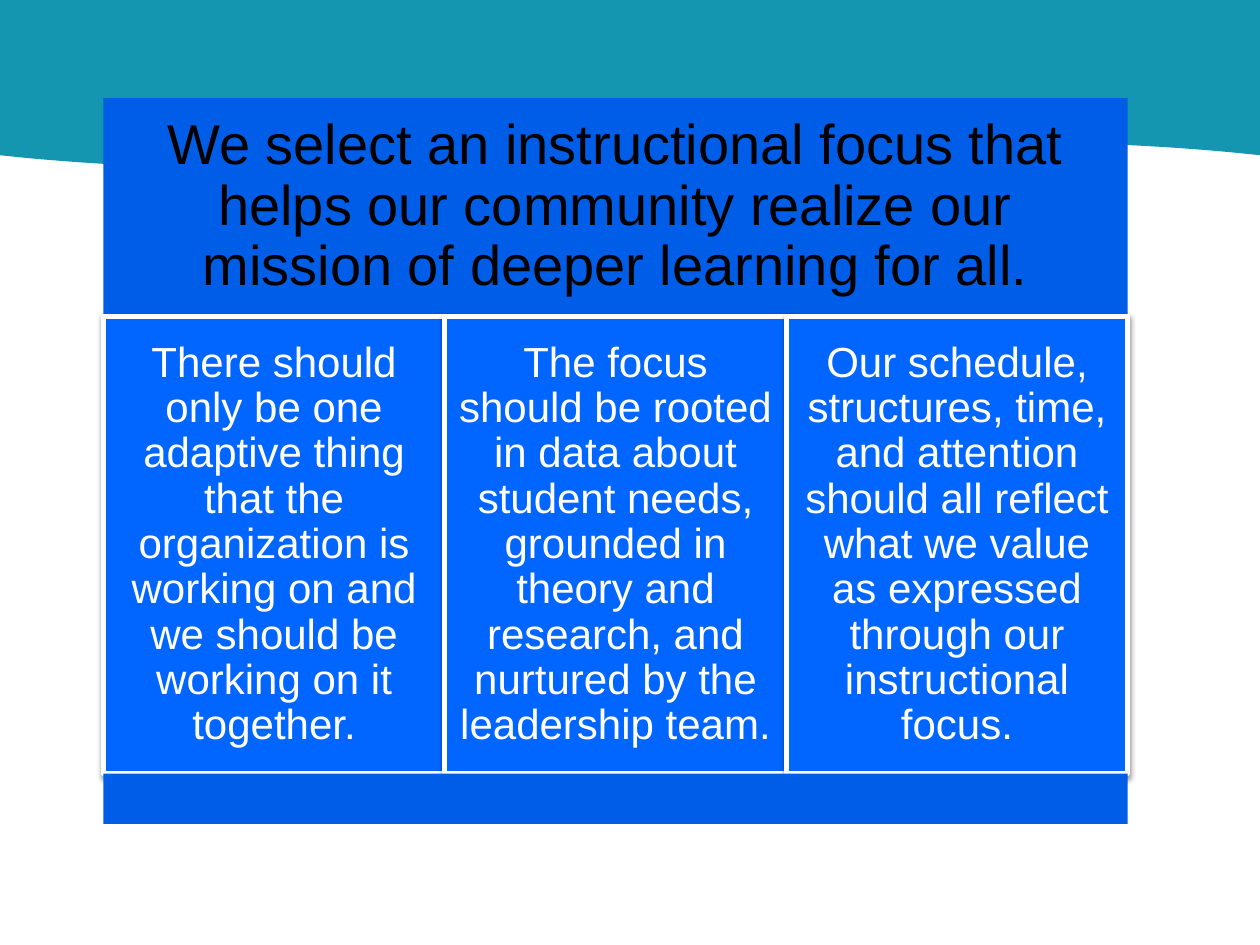
from dataclasses import dataclass

from lxml import etree
from pptx import Presentation
from pptx import util as u
from pptx.dml.color import RGBColor
from pptx.enum import shapes, text
from pptx.oxml import ns


@dataclass(frozen=True)
class Theme:
    font: str = "Arial"
    wave: str = "1496B0"
    band: str = "005DE7"
    column: str = "0066FF"
    white: str = "FFFFFF"
    black: str = "000000"
    title_size: int = 32
    body_size: int = 24


THEME = Theme()

LEFT, WIDTH = 0.82, 8.13
TITLE_TOP, TITLE_HEIGHT = 0.78, 1.73
COLUMN_TOP, COLUMN_HEIGHT = TITLE_TOP + TITLE_HEIGHT, 3.63
FOOTER_HEIGHT = 0.4

TITLE = ("We select an instructional focus that helps our community "
         "realize our mission of deeper learning for all.")
COLUMNS = [
    "There should only be one adaptive thing that the organization is "
    "working on and we should be working on it together.",
    "The focus should be rooted in data about student needs, grounded in "
    "theory and research, and nurtured by the leadership team.",
    "Our schedule, structures, time, and attention should all reflect what "
    "we value as expressed through our instructional focus.",
]


def add_block(slide, left, top, width, height, fill,
              kind=shapes.MSO_SHAPE.RECTANGLE):
    shape = slide.shapes.add_shape(kind, u.Inches(left), u.Inches(top),
                                   u.Inches(width), u.Inches(height))
    shape.shadow.inherit = False
    shape.fill.solid()
    shape.fill.fore_color.rgb = RGBColor.from_string(fill)
    shape.line.fill.background()
    return shape


def set_text(shape, content, *, size, color, inset):
    frame = shape.text_frame
    frame.word_wrap = True
    frame.vertical_anchor = text.MSO_ANCHOR.MIDDLE
    frame.margin_left = frame.margin_right = u.Inches(inset)
    frame.margin_top = frame.margin_bottom = u.Inches(inset)
    paragraph = frame.paragraphs[0]
    paragraph.text = content
    paragraph.alignment = text.PP_ALIGN.CENTER
    paragraph.line_spacing = 0.9
    paragraph.font.name = THEME.font
    paragraph.font.size = u.Pt(size)
    paragraph.font.color.rgb = RGBColor.from_string(color)


def add_outline_and_shadow(shape):
    shape.line.color.rgb = RGBColor.from_string(THEME.white)
    shape.line.width = u.Pt(3)
    effects = shape._element.spPr.find(ns.qn("a:effectLst"))
    shadow = etree.SubElement(effects, ns.qn("a:outerShdw"),
                              blurRad=str(u.Pt(3.1)), dist=str(u.Pt(1.6)),
                              dir="5400000", rotWithShape="0")
    color = etree.SubElement(shadow, ns.qn("a:srgbClr"), val=THEME.black)
    etree.SubElement(color, ns.qn("a:alpha"), val="38000")


def add_wave(slide):
    wave = add_block(slide, 0, -0.33, 10, 1.67, THEME.wave,
                     shapes.MSO_SHAPE.WAVE)
    wave.adjustments[0] = 0.065
    wave.adjustments[1] = 0
    wave.rotation = 180
    wave._element.spPr.xfrm.set("flipH", "1")


def main():
    presentation = Presentation()
    presentation.slide_width = u.Inches(10)
    presentation.slide_height = u.Inches(7.5)
    slide = presentation.slides.add_slide(presentation.slide_layouts[6])

    # Header wave
    add_wave(slide)

    # Title band
    title = add_block(slide, LEFT, TITLE_TOP, WIDTH, TITLE_HEIGHT, THEME.band)
    set_text(title, TITLE, size=THEME.title_size, color=THEME.black, inset=0.13)

    # Three equal columns
    column_width = WIDTH / len(COLUMNS)
    for index, content in enumerate(COLUMNS):
        column = add_block(slide, LEFT + index * column_width, COLUMN_TOP,
                           column_width, COLUMN_HEIGHT, THEME.column)
        add_outline_and_shadow(column)
        set_text(column, content, size=THEME.body_size, color=THEME.white,
                 inset=0.1)

    # Footer band
    add_block(slide, LEFT, COLUMN_TOP + COLUMN_HEIGHT, WIDTH, FOOTER_HEIGHT,
              THEME.band)

    presentation.save("out.pptx")


if __name__ == "__main__":
    main()
